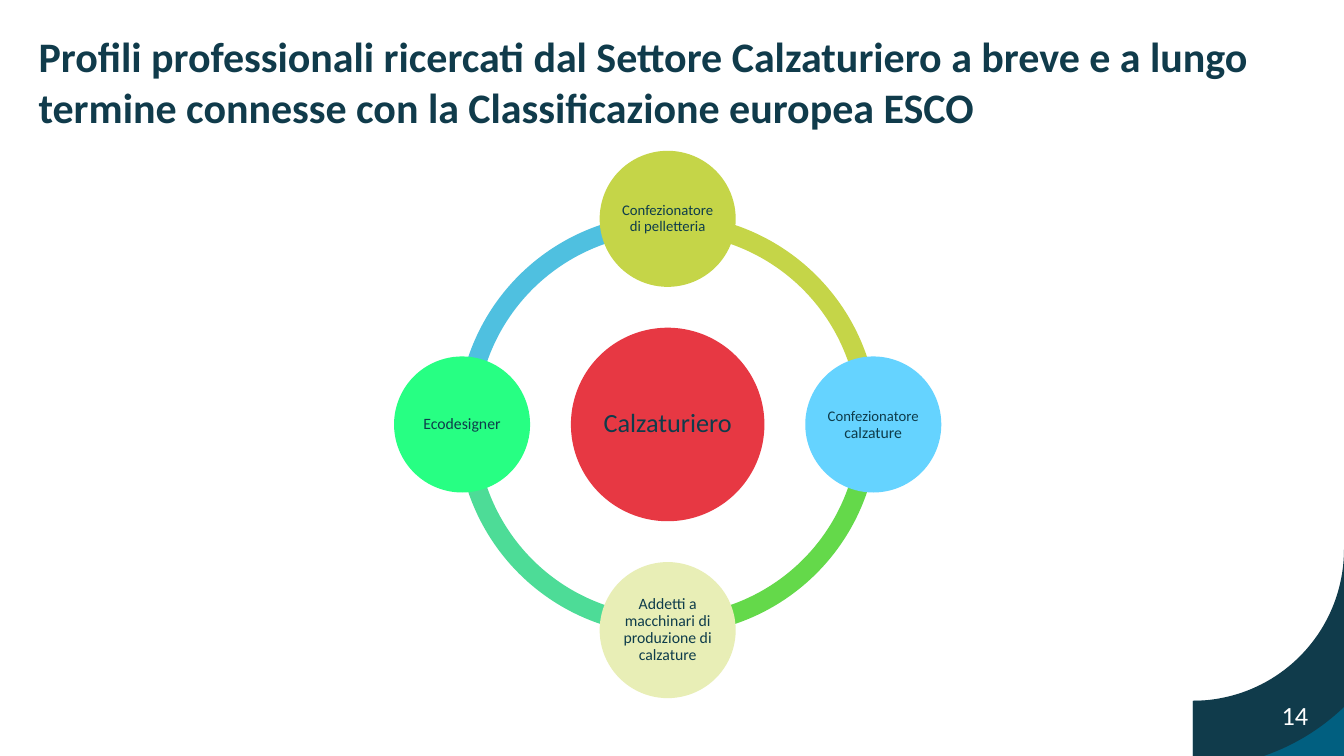
import math
from dataclasses import dataclass

import pptx
import pptx.dml.color
import pptx.enum.shapes
import pptx.enum.text
import pptx.util

SHAPE = pptx.enum.shapes.MSO_SHAPE
ALIGN = pptx.enum.text.PP_ALIGN
ANCHOR = pptx.enum.text.MSO_ANCHOR

WIDTH = pptx.util.Inches(17.78)
HEIGHT = pptx.util.Inches(10)


@dataclass(frozen=True)
class Theme:
    font: str = "Calibri"
    title_size: int = 40
    large_size: int = 25
    label_size: int = 15
    small_size: int = 14
    ink: str = "103B4B"
    label_ink: str = "0E3C4B"
    white: str = "FFFFFF"
    corner_blue: str = "015F80"
    red: str = "E73843"
    lime: str = "C5D548"
    sky: str = "65D3FF"
    cream: str = "E8EEB6"
    mint: str = "27FF83"
    arc_blue: str = "4FC0E0"
    arc_teal: str = "4DDC97"
    arc_green: str = "64D94A"


THEME = Theme()


def across(percent):
    return round(WIDTH * percent / 100)


def down(percent):
    return round(HEIGHT * percent / 100)


CENTRE = (across(49.68), down(56.15))
ORBIT = down(27.2)
RING_SIZE = down(55.7)
HUB_SIZE = down(25.6)
NODE_SIZE = down(18)


def paint(shape, color):
    shape.shadow.inherit = False
    shape.fill.solid()
    shape.fill.fore_color.rgb = pptx.dml.color.RGBColor.from_string(color)
    shape.line.fill.background()


def write(shape, spans, color, align=ALIGN.LEFT, anchor=ANCHOR.TOP,
          inset=0, bold=False, line_spacing=1.0):
    frame = shape.text_frame
    frame.word_wrap = True
    frame.auto_size = pptx.enum.text.MSO_AUTO_SIZE.NONE
    frame.vertical_anchor = anchor
    frame.margin_left = frame.margin_right = pptx.util.Inches(inset)
    frame.margin_top = frame.margin_bottom = pptx.util.Inches(inset)
    para = frame.paragraphs[0]
    para.alignment = align
    para.line_spacing = line_spacing
    for text, size in spans:
        span = para.add_run()
        span.text = text
        span.font.name = THEME.font
        span.font.size = pptx.util.Pt(size)
        span.font.bold = bold
        span.font.color.rgb = pptx.dml.color.RGBColor.from_string(color)


def add_centred(shapes, kind, centre, size, color):
    x, y = centre
    shape = shapes.add_shape(kind, x - size // 2, y - size // 2, size, size)
    paint(shape, color)
    return shape


def add_circle(shapes, centre, size, color, spans, inset):
    circle = add_centred(shapes, SHAPE.OVAL, centre, size, color)
    write(circle, spans, THEME.label_ink, align=ALIGN.CENTER,
          anchor=ANCHOR.MIDDLE, inset=inset, line_spacing=0.9)


def add_arc(shapes, start, color):
    arc = add_centred(shapes, SHAPE.BLOCK_ARC, CENTRE, RING_SIZE, color)
    degree = 0.6
    arc.adjustments[0] = start * degree
    arc.adjustments[1] = (start + 90) % 360 * degree
    arc.adjustments[2] = 0.046


def arc_points(centre, radius, start, end, steps=60):
    angles = [start + (end - start) * i / steps for i in range(steps + 1)]
    return [(round(centre[0] + radius * math.cos(angle)),
             round(centre[1] + radius * math.sin(angle))) for angle in angles]


def add_corner(page):
    inner, outer = down(20), down(28.87)
    centre = (WIDTH - inner, down(72.7))
    edge = centre[1] + inner
    base = page.shapes.add_shape(
        SHAPE.RECTANGLE, centre[0], edge, inner, HEIGHT - edge)
    paint(base, THEME.corner_blue)

    points = arc_points(centre, inner, 0, math.pi / 2)
    points.append((centre[0], HEIGHT))
    points += arc_points(centre, outer,
                         math.asin((HEIGHT - centre[1]) / outer),
                         math.acos(inner / outer))
    builder = page.shapes.build_freeform(*points[0])
    builder.add_line_segments(points[1:], close=True)
    paint(builder.convert_to_shape(), THEME.ink)


def add_title(page, text):
    title = page.shapes.title
    title.left, title.top = across(2.87), down(4.1)
    title.width, title.height = across(93.7), down(13.5)
    write(title, [(text, THEME.title_size)], THEME.ink, bold=True)


def add_wheel(page):
    shapes = page.shapes.add_group_shape().shapes
    arcs = [(180, THEME.arc_blue), (90, THEME.arc_teal),
            (0, THEME.arc_green), (270, THEME.lime)]
    for start, color in arcs:
        add_arc(shapes, start, color)

    add_circle(shapes, CENTRE, HUB_SIZE, THEME.red,
               [("Calzaturiero", THEME.large_size)], inset=0.03)
    nodes = [
        (THEME.lime, [("Confezionatore di pelletteria", THEME.small_size)]),
        (THEME.sky, [("Confezionatore", THEME.small_size),
                     (" calzature", THEME.label_size)]),
        (THEME.cream, [("Addetti a macchinari di produzione di calzature",
                        THEME.label_size)]),
        (THEME.mint, [("Ecodesigner", THEME.label_size)]),
    ]
    for index, (color, spans) in enumerate(nodes):
        angle = math.radians(index * 360 / len(nodes) - 90)
        centre = (round(CENTRE[0] + ORBIT * math.cos(angle)),
                  round(CENTRE[1] + ORBIT * math.sin(angle)))
        add_circle(shapes, centre, NODE_SIZE, color, spans, inset=0.02)


def add_page_number(page, number):
    box = page.shapes.add_textbox(
        across(95.35), down(92.5), across(2.53), down(4.3))
    write(box, [(number, THEME.large_size)], THEME.white)


def main():
    deck = pptx.Presentation()
    deck.slide_width, deck.slide_height = WIDTH, HEIGHT
    page = deck.slides.add_slide(deck.slide_layouts.get_by_name("Title Only"))
    add_corner(page)
    add_title(page, "Profili professionali ricercati dal Settore Calzaturiero "
                    "a breve e a lungo termine connesse con la "
                    "Classificazione europea ESCO")
    add_wheel(page)
    add_page_number(page, "14")
    deck.save("out.pptx")


if __name__ == "__main__":
    main()
